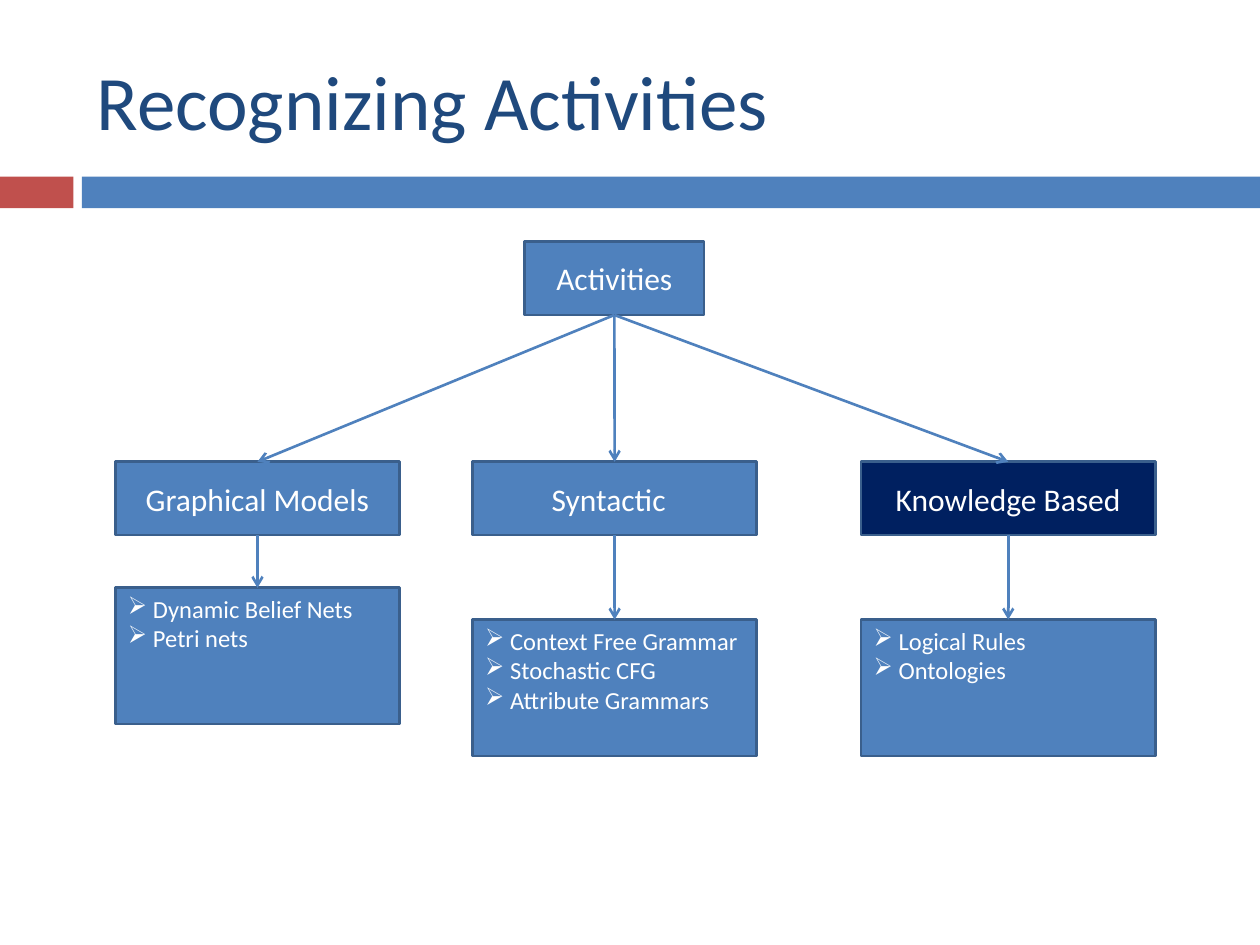
from dataclasses import dataclass

from lxml import etree
from pptx import Presentation
from pptx.dml.color import RGBColor
from pptx.enum.shapes import MSO_CONNECTOR, MSO_SHAPE
from pptx.enum.text import MSO_ANCHOR, PP_ALIGN
from pptx.oxml.ns import qn
from pptx.shapes.autoshape import Shape
from pptx.slide import Slide
from pptx.util import Cm, Pt

RECTANGLE = MSO_SHAPE.RECTANGLE
STRAIGHT = MSO_CONNECTOR.STRAIGHT
MIDDLE, TOP = MSO_ANCHOR.MIDDLE, MSO_ANCHOR.TOP
CENTER, LEFT = PP_ALIGN.CENTER, PP_ALIGN.LEFT

COLORS = {
    "title": "1F497D",
    "blue": "4F81BD",
    "red": "C0504D",
    "navy": "002060",
    "border": "3A5F8C",
    "white": "FFFFFF",
}
FONT = "Calibri"
LINE_WIDTH = Pt(1.5)
BULLET = "➢"

# Vertical layout in centimetres
BAND_TOP, BAND_HEIGHT = 3.56, 0.64
ROOT_TOP, HEADING_TOP = 4.87, 9.31
HEADING_HEIGHT, LIST_HEIGHT = 1.48, 2.75
BOTTOM_SITE, TOP_SITE = 2, 0


@dataclass(frozen=True)
class Branch:
    """One category; left, width and list_top are in centimetres."""
    heading: str
    items: tuple[str, ...]
    left: float
    width: float
    list_top: float
    color: str = "blue"


BRANCHES = (
    Branch("Graphical Models", ("Dynamic Belief Nets", "Petri nets"),
           2.33, 5.72, 11.85),
    Branch("Syntactic\t",
           ("Context Free Grammar", "Stochastic CFG", "Attribute Grammars"),
           9.53, 5.72, 12.49),
    Branch("Knowledge Based", ("Logical Rules", "Ontologies"),
           17.36, 5.93, 12.49, "navy"),
)


def rgb(name: str) -> RGBColor:
    return RGBColor.from_string(COLORS[name])


def write(shape: Shape, text: str, size: int, color: str,
          align: PP_ALIGN, anchor: MSO_ANCHOR) -> None:
    frame = shape.text_frame
    frame.word_wrap = True
    frame.vertical_anchor = anchor
    frame.text = text
    for para in frame.paragraphs:
        para.alignment = align
        for span in para.runs:
            span.font.name = FONT
            span.font.size = Pt(size)
            span.font.color.rgb = rgb(color)


def add_rectangle(page: Slide, left: float, top: float, width: float,
                  height: float, color: str) -> Shape:
    box = page.shapes.add_shape(
        RECTANGLE, Cm(left), Cm(top), Cm(width), Cm(height))
    box.shadow.inherit = False
    box.fill.solid()
    box.fill.fore_color.rgb = rgb(color)
    box.line.fill.background()
    return box


def add_node(page: Slide, left: float, top: float, width: float,
             height: float, color: str = "blue") -> Shape:
    """Add a rectangle with the diagram's border."""
    box = add_rectangle(page, left, top, width, height, color)
    box.line.color.rgb = rgb("border")
    box.line.width = LINE_WIDTH
    return box


def add_heading(page: Slide, text: str, left: float, top: float,
                width: float, color: str = "blue") -> Shape:
    box = add_node(page, left, top, width, HEADING_HEIGHT, color)
    write(box, text, 18, "white", CENTER, MIDDLE)
    return box


def add_list(page: Slide, branch: Branch) -> Shape:
    box = add_node(page, branch.left, branch.list_top, branch.width, LIST_HEIGHT)
    text = "\n".join(f" {item}" for item in branch.items)
    write(box, text, 14, "white", LEFT, TOP)
    for para in box.text_frame.paragraphs:
        properties = para._p.get_or_add_pPr()
        etree.SubElement(properties, qn("a:buChar")).set("char", BULLET)
    return box


def add_arrow(page: Slide, parent: Shape, child: Shape) -> None:
    """Join the bottom of the parent to the top of the child."""
    arrow = page.shapes.add_connector(STRAIGHT, 0, 0, 0, 0)
    arrow.begin_connect(parent, BOTTOM_SITE)
    arrow.end_connect(child, TOP_SITE)
    arrow.line.color.rgb = rgb("blue")
    arrow.line.width = LINE_WIDTH
    etree.SubElement(arrow.line._get_or_add_ln(), qn("a:tailEnd")).set("type", "arrow")
    etree.SubElement(arrow._element.spPr, qn("a:effectLst"))


def main() -> None:
    deck = Presentation()
    deck.slide_width, deck.slide_height = Cm(25.4), Cm(19.05)
    page = deck.slides.add_slide(deck.slide_layouts[6])

    add_rectangle(page, 0, BAND_TOP, 1.48, BAND_HEIGHT, "red")
    add_rectangle(page, 1.65, BAND_TOP, 23.75, BAND_HEIGHT, "blue")
    title = page.shapes.add_textbox(Cm(1.7), Cm(0.64), Cm(22.65), Cm(2.75))
    write(title, "Recognizing Activities", 44, "title", LEFT, MIDDLE)

    root = add_heading(page, "Activities", 10.58, ROOT_TOP, 3.61)
    headings = [add_heading(page, branch.heading, branch.left, HEADING_TOP,
                            branch.width, branch.color) for branch in BRANCHES]
    lists = [add_list(page, branch) for branch in BRANCHES]
    for heading, details in zip(headings, lists):
        add_arrow(page, root, heading)
        add_arrow(page, heading, details)

    deck.save("out.pptx")


if __name__ == "__main__":
    main()
